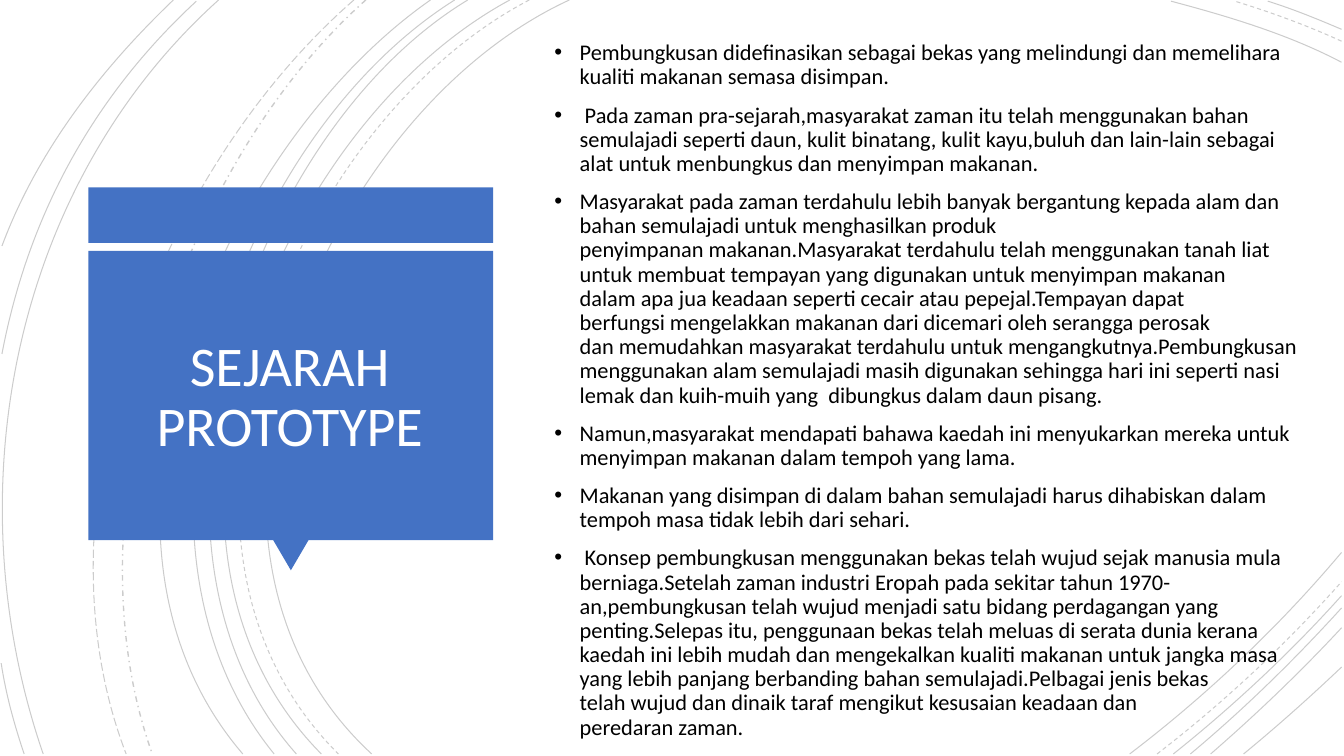
from collections import namedtuple

from lxml.etree import SubElement
from pptx import Presentation
from pptx.dml.color import RGBColor
from pptx.enum.dml import MSO_LINE
from pptx.enum.shapes import MSO_SHAPE
from pptx.enum.text import MSO_ANCHOR, MSO_AUTO_SIZE, PP_ALIGN
from pptx.oxml.ns import qn
from pptx.util import Cm, Pt

Box = namedtuple("Box", "left top width height")  # centimetres

FONT = "Calibri"
BLUE, BLACK, WHITE = "4472C4", "000000", "FFFFFF"
FOOT, RIGHT = 19, 33.81  # where the arcs leave the slide

# Arcs as cubic curves: start, two control points, end
SWEEPING_ARCS = [
    ((14.35, 0), (8, 2.92), (3.63, 13.72), (9.37, FOOT)),
    ((12.85, 0), (6.86, 3.23), (2.79, 13.64), (8.1, FOOT)),
    ((11.79, 0), (6.2, 3.38), (2.79, 13.74), (7.47, FOOT)),
    ((11.46, 0), (5.87, 3.51), (2.46, 13.54), (6.91, FOOT)),
    ((10.85, 0), (5.51, 3.73), (1.35, 13.44), (6.12, FOOT)),
    ((5.51, 0), (0.28, 4.7), (-1.17, 12.45), (1.09, FOOT)),
]
LEFT_EDGE_ARCS = [
    ((4.95, 0.03), (2.34, 2.44), (0.71, 5.44), (0.05, 8.92)),
    ((0.03, 16.71), (0.15, 17.5), (0.36, 18.26), (0.61, FOOT)),
    ((4.37, 0), (2.54, 1.75), (0.94, 3.81), (0.05, 6.2)),
]
TOP_RIGHT_ARCS = [
    ((RIGHT, 1.57), (32.46, 0.86), (30.94, 0.41), (29.51, 0.03)),
    ((RIGHT, 0.74), (33.2, 0.48), (32.59, 0.23), (31.95, 0.03)),
]
BOTTOM_RIGHT_ARCS = [
    ((28.47, FOOT), (30.4, 17.53), (32.23, 15.8), (RIGHT, 13.92)),
    ((29.57, FOOT), (31.06, 17.81), (32.51, 16.46), (RIGHT, 15.01)),
    ((30, FOOT), (31.34, 17.88), (32.61, 16.64), (RIGHT, 15.32)),
    ((30.51, FOOT), (31.65, 18.01), (32.77, 16.94), (RIGHT, 15.82)),
    ((31.34, FOOT), (32.18, 18.31), (33, 17.58), (RIGHT, 16.81)),
]
DASHED_ARCS = [
    ((13.34, 0), (7.24, 3.18), (3.12, 13.64), (8.53, FOOT)),
    ((RIGHT, 1.04), (32.94, 0.64), (32, 0.3), (31.12, 0.03)),
    ((29.16, FOOT), (30.81, 17.73), (32.39, 16.26), (RIGHT, 14.66)),
]
DASH_DOT_ARC = ((9.22, 0), (4.47, 4.22), (1.65, 12.93), (3.84, FOOT))
LONG_DASH_ARC = ((8.92, 0), (3.99, 4.29), (0.74, 12.67), (3.18, FOOT))

TITLE = "SEJARAH PROTOTYPE"
NO_BREAK_MARK, NO_BREAK_SPACE = "~", chr(160)  # the mark stands for a space that does not break
HISTORY = [
    "Pembungkusan didefinasikan sebagai bekas yang melindungi dan memelihara kualiti makanan semasa disimpan.",
    "~Pada zaman pra-sejarah,masyarakat zaman itu telah menggunakan~bahan semulajadi seperti daun, kulit "
    "binatang, kulit kayu,buluh dan~lain-lain sebagai alat untuk menbungkus dan menyimpan makanan.",
    "Masyarakat pada zaman terdahulu lebih banyak bergantung kepada alam dan bahan semulajadi untuk "
    "menghasilkan produk penyimpanan~makanan.Masyarakat terdahulu telah menggunakan tanah liat "
    "untuk~membuat tempayan yang digunakan untuk menyimpan makanan dalam~apa jua keadaan seperti cecair "
    "atau pepejal.Tempayan dapat berfungsi~mengelakkan makanan dari dicemari oleh serangga perosak "
    "dan~memudahkan masyarakat terdahulu untuk mengangkutnya.Pembungkusan menggunakan alam semulajadi "
    "masih~digunakan sehingga hari ini seperti nasi lemak dan kuih-muih yang~~dibungkus dalam daun pisang.",
    "Namun,masyarakat mendapati bahawa kaedah ini menyukarkan~mereka untuk menyimpan makanan dalam "
    "tempoh yang lama.~",
    "Makanan yang disimpan di dalam bahan semulajadi harus~dihabiskan dalam tempoh masa tidak lebih "
    "dari sehari.",
    "~Konsep pembungkusan menggunakan bekas telah wujud sejak manusia mula berniaga.Setelah zaman "
    "industri Eropah pada sekitar~tahun 1970-an,pembungkusan telah wujud menjadi satu "
    "bidang~perdagangan yang penting.Selepas itu, penggunaan bekas telah~meluas di serata dunia kerana "
    "kaedah ini lebih mudah dan~mengekalkan kualiti makanan untuk jangka masa yang lebih~panjang "
    "berbanding bahan semulajadi.Pelbagai jenis bekas telah~wujud dan dinaik taraf mengikut kesusaian "
    "keadaan dan peredaran~zaman.",
]


def color(value):
    return RGBColor.from_string(value)


def lengths(box):
    return [Cm(value) for value in box]


def write(frame, paragraphs, size, fill, align=PP_ALIGN.LEFT, before=0, bullet=None):
    """Fill a text frame, one paragraph for each string."""
    frame.word_wrap = True
    frame.auto_size = MSO_AUTO_SIZE.NONE
    frame.vertical_anchor = MSO_ANCHOR.MIDDLE
    for index, text in enumerate(paragraphs):
        paragraph = frame.add_paragraph() if index else frame.paragraphs[0]
        paragraph.alignment = align
        paragraph.line_spacing = 0.9
        paragraph.space_before = Pt(before)
        run = paragraph.add_run()
        run.text = text.replace(NO_BREAK_MARK, NO_BREAK_SPACE)
        run.font.name = FONT
        run.font.size = Pt(size)
        run.font.color.rgb = color(fill)
        if bullet:
            properties = paragraph._p.get_or_add_pPr()
            properties.set("marL", str(Cm(0.64)))
            properties.set("indent", str(-Cm(0.64)))
            SubElement(properties, qn("a:buFont"), typeface="Arial")
            SubElement(properties, qn("a:buChar"), char=bullet)


def add_arc(slide, box, controls, dash=MSO_LINE.SOLID, width=0.75):
    start, *others = [(Cm(box.left + x), Cm(box.top + y)) for x, y in controls]
    builder = slide.shapes.build_freeform(*start)
    builder.add_line_segments(others, close=False)
    arc = builder.convert_to_shape()
    # Turn the three straight segments into one cubic curve
    outline = next(arc._element.iter(qn("a:path")))
    curve = SubElement(outline, qn("a:cubicBezTo"))
    for segment in outline.findall(qn("a:lnTo")):
        curve.append(segment[0])
        outline.remove(segment)
    arc.shadow.inherit = False
    arc.fill.background()
    arc.line.color.rgb = color(BLACK)
    arc.line.width = Pt(width)
    arc.line.dash_style = dash
    # Faint line: 20 % opacity
    SubElement(next(arc._element.spPr.iter(qn("a:srgbClr"))), qn("a:alpha"), val="20000")


def add_backdrop(slide, box):
    for controls in SWEEPING_ARCS + LEFT_EDGE_ARCS + TOP_RIGHT_ARCS + BOTTOM_RIGHT_ARCS:
        add_arc(slide, box, controls)
    for controls in DASHED_ARCS:
        add_arc(slide, box, controls, MSO_LINE.DASH)
    add_arc(slide, box, DASH_DOT_ARC, MSO_LINE.DASH_DOT, width=1)
    add_arc(slide, box, LONG_DASH_ARC, MSO_LINE.LONG_DASH)


def add_block(slide, preset, box, rotation=0):
    block = slide.shapes.add_shape(preset, *lengths(box))
    block.shadow.inherit = False
    block.fill.solid()
    block.fill.fore_color.rgb = color(BLUE)
    block.line.fill.background()
    block.rotation = rotation


def add_title_panel(slide, box):
    bar_height, gap, pointer_width, pointer_height = 1.4, 0.2, 0.89, 0.76
    panel_top = box.top + bar_height + gap
    panel_height = box.height - bar_height - gap - pointer_height
    pointer_left = box.left + (box.width - pointer_width) / 2
    # Bar, pointer and panel
    add_block(slide, MSO_SHAPE.RECTANGLE, Box(box.left, box.top, box.width, bar_height))
    add_block(slide, MSO_SHAPE.ISOSCELES_TRIANGLE,
              Box(pointer_left, panel_top + panel_height, pointer_width, pointer_height), 180)
    add_block(slide, MSO_SHAPE.RECTANGLE, Box(box.left, panel_top, box.width, panel_height))
    # Title, brought in front of the panel
    title = slide.shapes.title
    title.left, title.top, title.width, title.height = lengths(
        Box(box.left + 0.28, panel_top + 0.39, box.width - 0.62, panel_height - 0.64))
    write(title.text_frame, [TITLE], 40, WHITE, align=PP_ALIGN.CENTER)
    slide.shapes._spTree.append(title._element)


def add_history(slide, box):
    history = slide.shapes.add_textbox(*lengths(box))
    write(history.text_frame, HISTORY, 16, BLACK, before=10, bullet="•")


def main():
    deck = Presentation()
    deck.slide_width, deck.slide_height = Cm(33.87), Cm(19.05)
    slide = deck.slides.add_slide(deck.slide_layouts[5])
    add_backdrop(slide, Box(0, 0, 33.87, 19.05))
    add_title_panel(slide, Box(2.23, 4.72, 10.2, 9.65))
    add_history(slide, Box(13.72, 0.7, 19.33, 18.29))
    deck.save("out.pptx")


if __name__ == "__main__":
    main()
